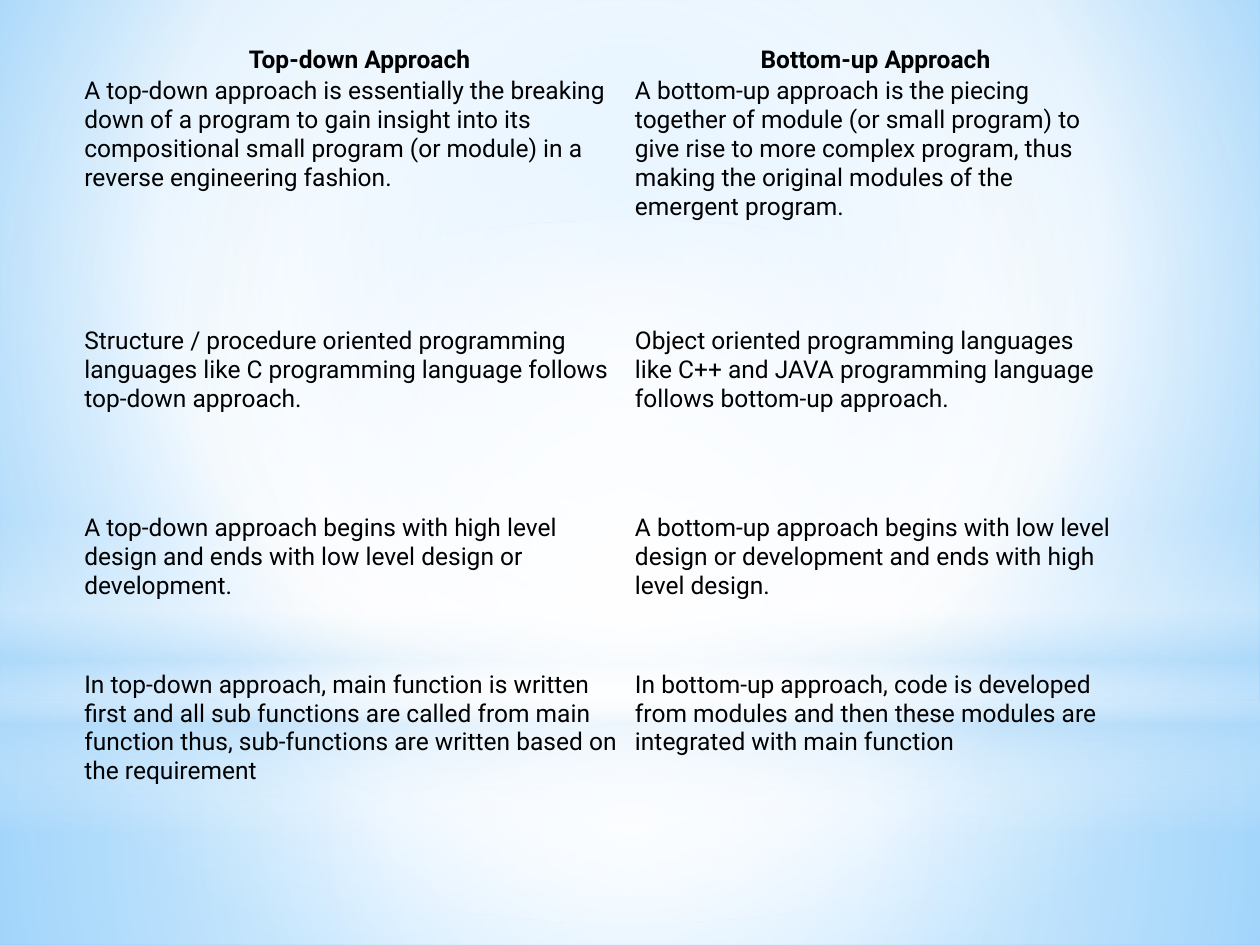
from lxml import etree
from pptx import Presentation
from pptx.dml.color import RGBColor
from pptx.enum.shapes import MSO_SHAPE as Shape
from pptx.enum.text import PP_ALIGN as Align
from pptx.oxml.ns import nsdecls, qn
from pptx.util import Cm, Pt

THEME = {
    "font": "Roboto", "size": Pt(14), "text": "000000",
    "white": "FFFFFF", "mist": "B4DCFA", "sky": "9ED5FF", "deep": "5BB9FF",
}
NO_STYLE_NO_GRID = "{2D5ABB26-0587-4C30-8999-92F81FD0307C}"

HEADERS = ("Top-down Approach", "Bottom-up Approach")
COMPARISON = [
    ("A top-down approach is essentially the breaking down of a program to gain insight into its "
     "compositional small program (or module) in a reverse engineering fashion.",
     "A bottom-up approach is the piecing together of module (or small program) to give rise to "
     "more complex program, thus making the original modules of the emergent program."),
    ("Structure / procedure oriented programming languages like C programming language follows "
     "top-down approach.",
     "Object oriented programming languages like C++ and JAVA programming language follows "
     "bottom-up approach."),
    ("A top-down approach begins with high level design and ends with low level design or "
     "development.",
     "A bottom-up approach begins with low level design or development and ends with high level "
     "design."),
    ("In top-down approach, main function is written first and all sub functions are called from "
     "main function thus, sub-functions are written based on the requirement",
     "In bottom-up approach, code is developed from modules and then these modules are integrated "
     "with main function"),
]
COL_WIDTHS = (11.1, 9.7)
ROW_HEIGHTS = (0.64, 5.03, 3.78, 3.15, 4.42)
TABLE_LEFT, TABLE_TOP = 1.7, 0.91
SLIDE_W, SLIDE_H, HORIZON = 25.4, 19.05, 14.17

CENTRE = (50, 50, 50, 50)
BACKDROP = ([(0, "sky", 100), (60, "white", 100), (100, "deep", 100)], (20, 10, 20, 60))
GLOWS = [
    (Shape.RECTANGLE, HORIZON, SLIDE_H - HORIZON,
     [(0, "white", 91), (37, "white", 76), (100, "mist", 79)], CENTRE),
    (Shape.RECTANGLE, 0, HORIZON,
     [(0, "white", 89), (48, "white", 62), (100, "mist", 79)], CENTRE),
    (Shape.RECTANGLE, 10.46, 6.35,
     [(0, "white", 0), (29, "white", 30), (45, "mist", 40),
      (55, "white", 26), (65, "mist", 60), (100, "white", 0)], None),
    (Shape.OVAL, 4.45, HORIZON, [(0, "white", 100), (56, "white", 0)], CENTRE),
]


def set_gradient(fill, element, stops, focus):
    fill.solid()
    fill.fore_color.rgb = RGBColor.from_string(THEME["white"])
    marks = "".join(
        f'<a:gs pos="{pos * 1000}"><a:srgbClr val="{THEME[color]}">'
        f'<a:alpha val="{alpha * 1000}"/></a:srgbClr></a:gs>'
        for pos, color, alpha in stops)
    if focus:
        sides = " ".join(f'{side}="{pct * 1000}"' for side, pct in zip("ltrb", focus))
        shade = f'<a:path path="circle"><a:fillToRect {sides}/></a:path>'
    else:
        shade = '<a:lin ang="5400000" scaled="0"/>'
    gradient = etree.fromstring(
        f'<a:gradFill {nsdecls("a")} rotWithShape="1"><a:gsLst>{marks}</a:gsLst>{shade}</a:gradFill>')
    solid = element.find(f'.//{qn("a:solidFill")}')
    solid.getparent().replace(solid, gradient)


def add_glow(s, kind, top, height, stops, focus):
    sp = s.shapes.add_shape(kind, 0, Cm(top), Cm(SLIDE_W), Cm(height))
    sp.shadow.inherit = False
    set_gradient(sp.fill, sp._element, stops, focus)
    sp.line.fill.background()


def fill_cell(cell, text, is_header):
    cell.fill.background()
    cell.margin_left = cell.margin_right = cell.margin_top = cell.margin_bottom = 0
    p = cell.text_frame.paragraphs[0]
    p.alignment = Align.CENTER if is_header else Align.LEFT
    r = p.add_run()
    r.text = text
    r.font.name = THEME["font"]
    r.font.size = THEME["size"]
    r.font.bold = is_header
    r.font.color.rgb = RGBColor.from_string(THEME["text"])


def add_comparison(s):
    rows = [HEADERS, *COMPARISON]
    table = s.shapes.add_table(
        len(rows), len(HEADERS), Cm(TABLE_LEFT), Cm(TABLE_TOP),
        Cm(sum(COL_WIDTHS)), Cm(sum(ROW_HEIGHTS))).table
    table.first_row = table.horz_banding = False
    table._tbl.tblPr.find(qn("a:tableStyleId")).text = NO_STYLE_NO_GRID
    for column, width in zip(table.columns, COL_WIDTHS):
        column.width = Cm(width)
    for i, (row, height, texts) in enumerate(zip(table.rows, ROW_HEIGHTS, rows)):
        row.height = Cm(height)
        for cell, text in zip(row.cells, texts):
            fill_cell(cell, text, i == 0)


def main():
    prs = Presentation()
    prs.slide_width, prs.slide_height = Cm(SLIDE_W), Cm(SLIDE_H)
    s = prs.slides.add_slide(prs.slide_layouts.get_by_name("Blank"))
    set_gradient(s.background.fill, s._element, *BACKDROP)
    for glow in GLOWS:
        add_glow(s, *glow)
    add_comparison(s)
    prs.save("out.pptx")


if __name__ == "__main__":
    main()
